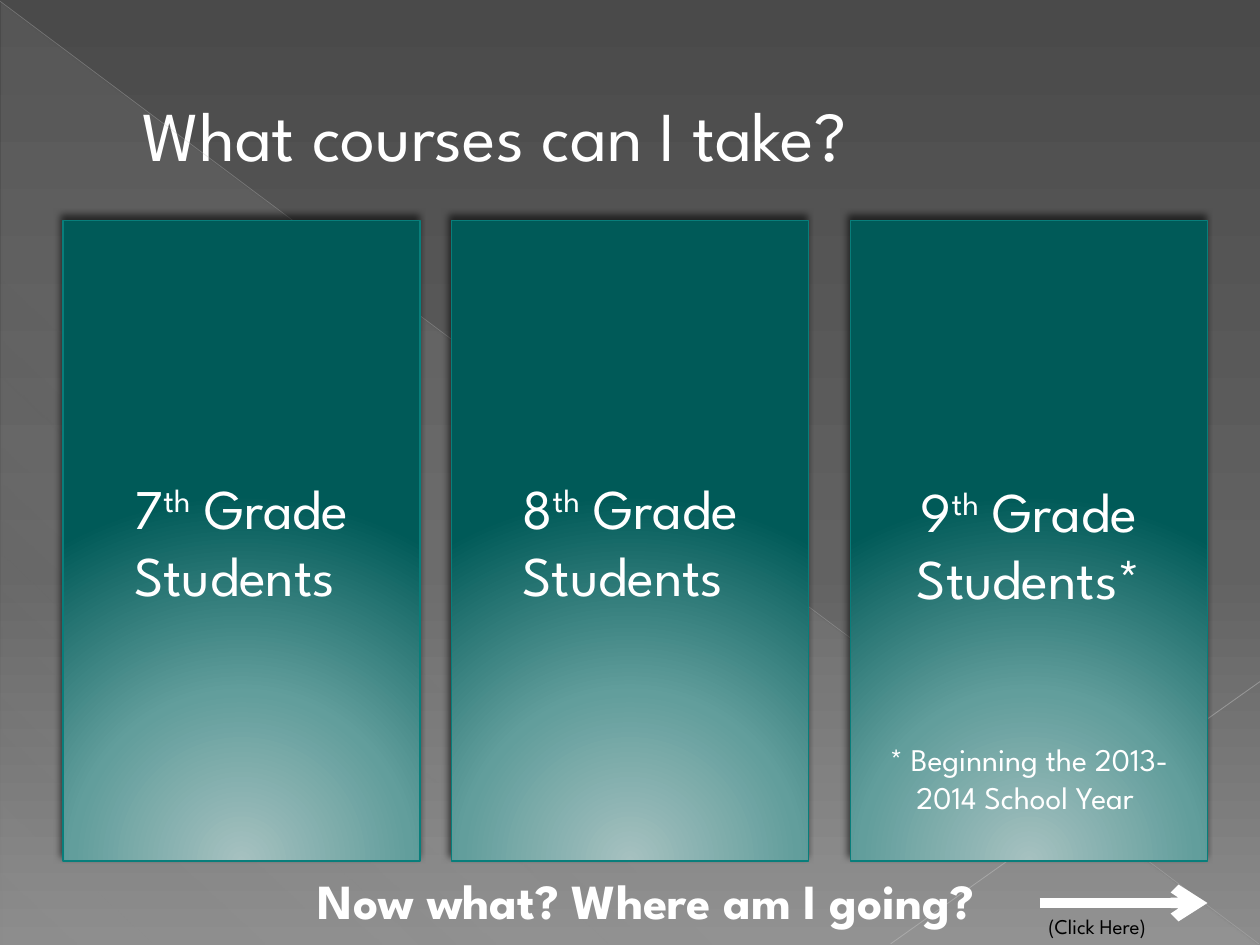
from lxml.etree import SubElement
from pptx import Presentation
from pptx.dml.color import RGBColor
from pptx.enum.shapes import MSO_CONNECTOR, MSO_SHAPE
from pptx.enum.text import MSO_ANCHOR, PP_ALIGN
from pptx.oxml import parse_xml
from pptx.oxml.ns import nsdecls, qn
from pptx.util import Pt

COLORS = {
    "white": "FFFFFF", "black": "000000", "card_edge": "087E7B",
    "sheen": "D2D2D2", "falling_line": "BFBFBF", "rising_line": "C6C6C6",
    "dark_gray": "4A4A4A", "mid_gray": "626262", "light_gray": "8C8C8C",
    "pale_teal": "A6C1C0", "mid_teal": "629E9C", "deep_teal": "005A58",
}
FONT = "League Spartan"


def write(frame, text, size, color="white", bold=False, align=PP_ALIGN.CENTER,
          anchor=MSO_ANCHOR.TOP, gap_after=0, new_para=False):
    """Add a paragraph; parts between ^ marks are superscript."""
    frame.word_wrap = True
    frame.vertical_anchor = anchor
    para = frame.add_paragraph() if new_para else frame.paragraphs[0]
    para.alignment = align
    para.space_after = Pt(gap_after)
    for index, part in enumerate(text.split("^")):
        span = para.add_run()
        span.text = part
        span.font.name = FONT
        span.font.size = Pt(size)
        span.font.bold = bold
        span.font.color.rgb = RGBColor.from_string(COLORS[color])
        if index % 2:
            span.font._element.set("baseline", "30000")


def fill_gradient(fill, holder, stops, direction):
    """Fill with (position, color, opacity) stops, all in percent."""
    fill.solid()
    marks = "".join(
        f'<a:gs pos="{position * 1000}"><a:srgbClr val="{COLORS[color]}">'
        f'<a:alpha val="{opacity * 1000}"/></a:srgbClr></a:gs>'
        for position, color, opacity in stops)
    solid = holder.find(qn("a:solidFill"))
    holder.replace(solid, parse_xml(
        f'<a:gradFill {nsdecls("a")} rotWithShape="1"><a:gsLst>{marks}</a:gsLst>'
        f'{direction}</a:gradFill>'))


deck = Presentation()
deck.slide_width, deck.slide_height = Pt(720), Pt(540)
page = deck.slides.add_slide(deck.slide_layouts[6])

# Background
backdrop = page.background.fill
backdrop.solid()
fill_gradient(backdrop, page.element.find(".//" + qn("p:bgPr")),
              [(0, "dark_gray", 100), (60, "mid_gray", 100), (100, "light_gray", 100)],
              '<a:lin ang="5400000" scaled="0"/>')

# Pale triangle
triangle = page.shapes.add_shape(MSO_SHAPE.RIGHT_TRIANGLE, Pt(0.7), Pt(1.4), Pt(718.6), Pt(538.6))
triangle.shadow.inherit = False
triangle.line.fill.background()
fill_gradient(triangle.fill, triangle.element.spPr,
              [(0, "sheen", 10), (70, "sheen", 8), (100, "sheen", 1)],
              '<a:lin ang="7980000" scaled="0"/>')

# Title
title = page.shapes.add_textbox(Pt(36), Pt(21), Pt(648), Pt(110))
title.text_frame.margin_left = Pt(45.4)
write(title.text_frame, "What courses can I take?", 40,
      align=PP_ALIGN.LEFT, anchor=MSO_ANCHOR.MIDDLE)

# Thin background lines and the arrow
LINES = [
    ((0, 0.7), (719.3, 539.3), "falling_line", 0.39, 35, None),
    ((720, 389.5), (509, 539.3), "rising_line", 0.47, 45, None),
    ((594, 516), (690, 516), "white", 6, 100, "arrow"),
]
for start, end, color, width, opacity, head in LINES:
    line = page.shapes.add_connector(MSO_CONNECTOR.STRAIGHT, *map(Pt, start + end))
    line.line.width = Pt(width)
    line.line.color.rgb = RGBColor.from_string(COLORS[color])
    stroke = line.line._get_or_add_ln()
    if opacity < 100:
        SubElement(stroke.find(".//" + qn("a:srgbClr")), qn("a:alpha"), val=str(opacity * 1000))
    if head:
        SubElement(stroke, qn("a:tailEnd"), type=head)
    SubElement(line.element.spPr, qn("a:effectLst"))

# Grade cards
CARDS = [(36, "7^th^ Grade Students ", None),
         (258, "8^th^ Grade Students ", None),
         (486, "9^th^ Grade Students*", "* Beginning the 2013-2014 School Year ")]
for left, grade, note in CARDS:
    card = page.shapes.add_shape(MSO_SHAPE.RECTANGLE, Pt(left), Pt(126), Pt(204), Pt(366))
    fill_gradient(card.fill, card.element.spPr,
                  [(0, "pale_teal", 100), (46, "mid_teal", 100), (100, "deep_teal", 100)],
                  '<a:path path="circle"><a:fillToRect l="50000" t="155000" r="50000" b="-55000"/></a:path>')
    card.line.color.rgb = RGBColor.from_string(COLORS["card_edge"])
    card.line.width = Pt(0.75)
    card.shadow.inherit = False
    card.element.spPr.find(qn("a:effectLst")).append(parse_xml(
        f'<a:outerShdw {nsdecls("a")} blurRad="{Pt(4)}" dist="{Pt(3)}" dir="14700000" rotWithShape="0">'
        f'<a:srgbClr val="{COLORS["black"]}"><a:alpha val="60000"/></a:srgbClr></a:outerShdw>'))
    frame = card.text_frame
    if note:
        frame.margin_bottom = Pt(25.7)
        write(frame, grade, 32, gap_after=74)
        write(frame, note, 18, anchor=MSO_ANCHOR.BOTTOM, new_para=True)
    else:
        write(frame, grade, 32, anchor=MSO_ANCHOR.MIDDLE)

# Closing question and arrow label
question = page.shapes.add_textbox(Pt(132), Pt(494), Pt(474), Pt(41))
write(question.text_frame, "Now what? Where am I going?", 28, bold=True)
label = page.shapes.add_textbox(Pt(564), Pt(518.4), Pt(126), Pt(21.6))
write(label.text_frame, "(Click Here)", 12, color="black")

deck.save("out.pptx")
